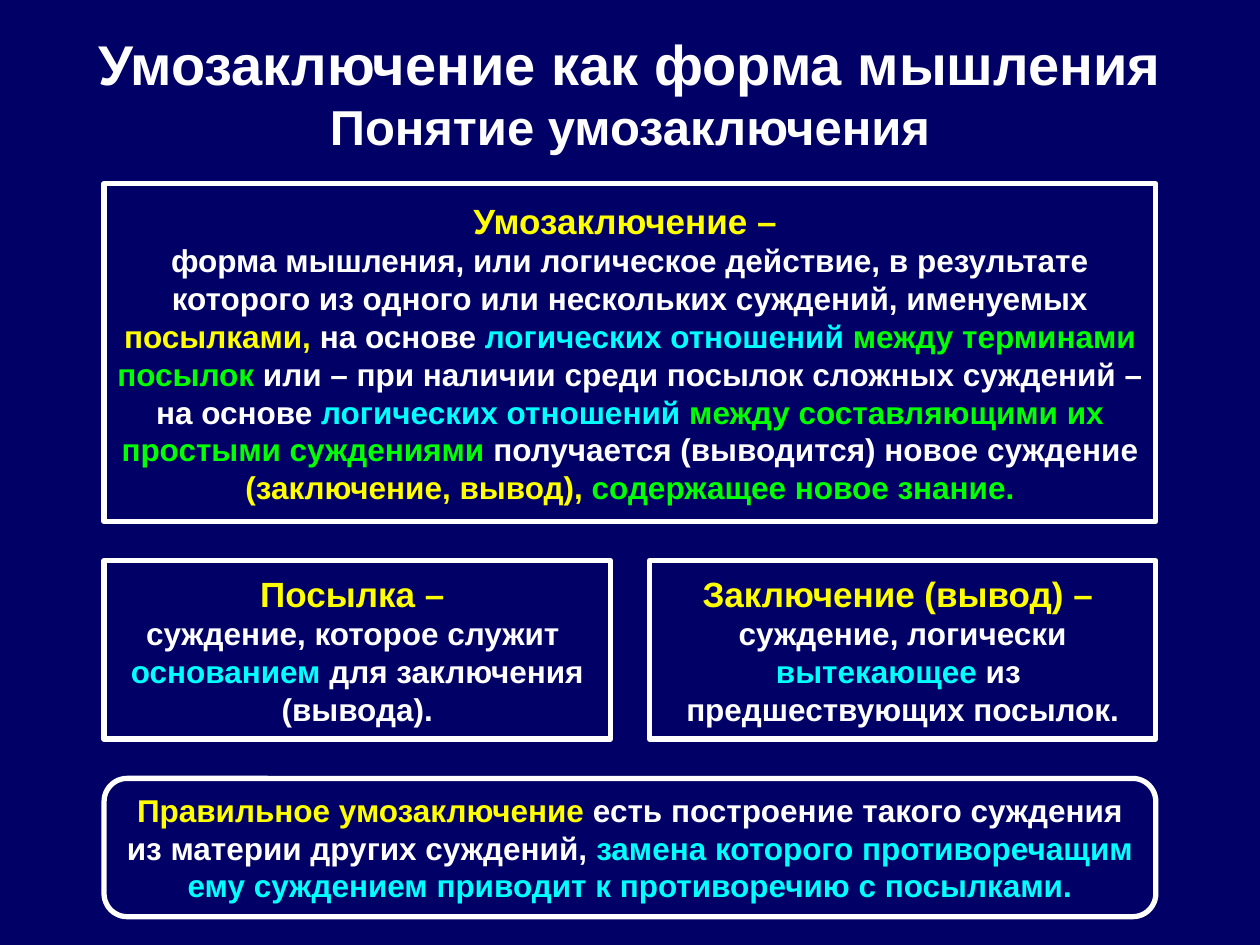
from pptx import Presentation
from pptx import util as u
from pptx.dml.color import RGBColor
from pptx.enum import shapes, text

COLORS = {
    "navy": "000066",
    "white": "FFFFFF",
    "yellow": "FFFF00",
    "cyan": "00FFFF",
    "green": "00FF00",
}
WIDTH, HEIGHT = 720, 540
MARGIN, GAP = 59.5, 22.4
FULL = WIDTH - 2 * MARGIN
HALF = (FULL - GAP) / 2
TOP = 105
DEFINITION_HEIGHT, TERM_HEIGHT, RULE_HEIGHT = 193, 102, 79


class SlideBuilder:
    font = {"name": "Arial", "bold": True}
    frame = {"word_wrap": True, "vertical_anchor": text.MSO_ANCHOR.MIDDLE}
    line_width = 3

    def __init__(self, slide):
        self.slide = slide

    def color(self, name):
        return RGBColor.from_string(COLORS[name])

    def apply(self, target, values):
        for name, value in values.items():
            setattr(target, name, value)

    def background(self, name):
        fill = self.slide.background.fill
        fill.solid()
        fill.fore_color.rgb = self.color(name)

    def add_runs(self, shape, runs):
        self.apply(shape.text_frame, self.frame)
        paragraph = shape.text_frame.paragraphs[0]
        paragraph.alignment = text.PP_ALIGN.CENTER
        for content, size, color in runs:
            for index, line in enumerate(content.split("\n")):
                if index:
                    paragraph.add_line_break()
                if line:
                    run = paragraph.add_run()
                    run.text = line
                    self.apply(run.font, {**self.font, "size": u.Pt(size)})
                    run.font.color.rgb = self.color(color)

    def title(self, box, runs):
        shape = self.slide.shapes.add_textbox(*map(u.Pt, box))
        self.add_runs(shape, runs)

    def panel(self, box, runs, kind=shapes.MSO_SHAPE.RECTANGLE):
        shape = self.slide.shapes.add_shape(kind, *map(u.Pt, box))
        shape.shadow.inherit = False
        shape.fill.background()
        shape.line.color.rgb = self.color("white")
        shape.line.width = u.Pt(self.line_width)
        self.add_runs(shape, runs)


def main():
    presentation = Presentation()
    presentation.slide_width = u.Pt(WIDTH)
    presentation.slide_height = u.Pt(HEIGHT)
    builder = SlideBuilder(presentation.slides.add_slide(presentation.slide_layouts[6]))
    builder.background("navy")

    builder.title((36, 21.6, 648, 62.6), [
        ("Умозаключение как форма мышления\n", 32, "white"),
        ("Понятие умозаключения", 28, "white"),
    ])

    builder.panel((MARGIN, TOP, FULL, DEFINITION_HEIGHT), [
        ("Умозаключение – \n", 20, "yellow"),
        ("форма мышления, или логическое действие, в результате которого "
         "из одного или нескольких суждений, именуемых ", 18, "white"),
        ("посылками, ", 18, "yellow"),
        ("на основе", 18, "white"),
        (" логических отношений ", 18, "cyan"),
        ("между терминами посылок", 18, "green"),
        (" или – при наличии среди посылок сложных суждений – на основе", 18, "white"),
        (" логических отношений ", 18, "cyan"),
        ("между составляющими их простыми суждениями ", 18, "green"),
        ("получается (выводится) новое суждение ", 18, "white"),
        ("(заключение, вывод), ", 18, "yellow"),
        ("содержащее новое знание.", 18, "green"),
    ])

    terms = [
        [
            ("Посылка – \n", 20, "yellow"),
            ("суждение, которое служит \n", 18, "white"),
            ("основанием", 18, "cyan"),
            (" для заключения (вывода).", 18, "white"),
        ],
        [
            ("Заключение (вывод) – \n", 20, "yellow"),
            ("суждение, логически ", 18, "white"),
            ("вытекающее", 18, "cyan"),
            (" из \nпредшествующих посылок.", 18, "white"),
        ],
    ]
    term_top = TOP + DEFINITION_HEIGHT + GAP
    for column, runs in enumerate(terms):
        left = MARGIN + column * (HALF + GAP)
        builder.panel((left, term_top, HALF, TERM_HEIGHT), runs)

    rule_top = term_top + TERM_HEIGHT + GAP
    builder.panel((MARGIN, rule_top, FULL, RULE_HEIGHT), [
        ("Правильное умозаключение ", 18, "yellow"),
        ("есть построение такого суждения из материи других суждений, ", 18, "white"),
        ("замена которого противоречащим ему суждением приводит "
         "к противоречию с посылками.", 18, "cyan"),
    ], shapes.MSO_SHAPE.ROUNDED_RECTANGLE)

    presentation.save("out.pptx")


if __name__ == "__main__":
    main()
